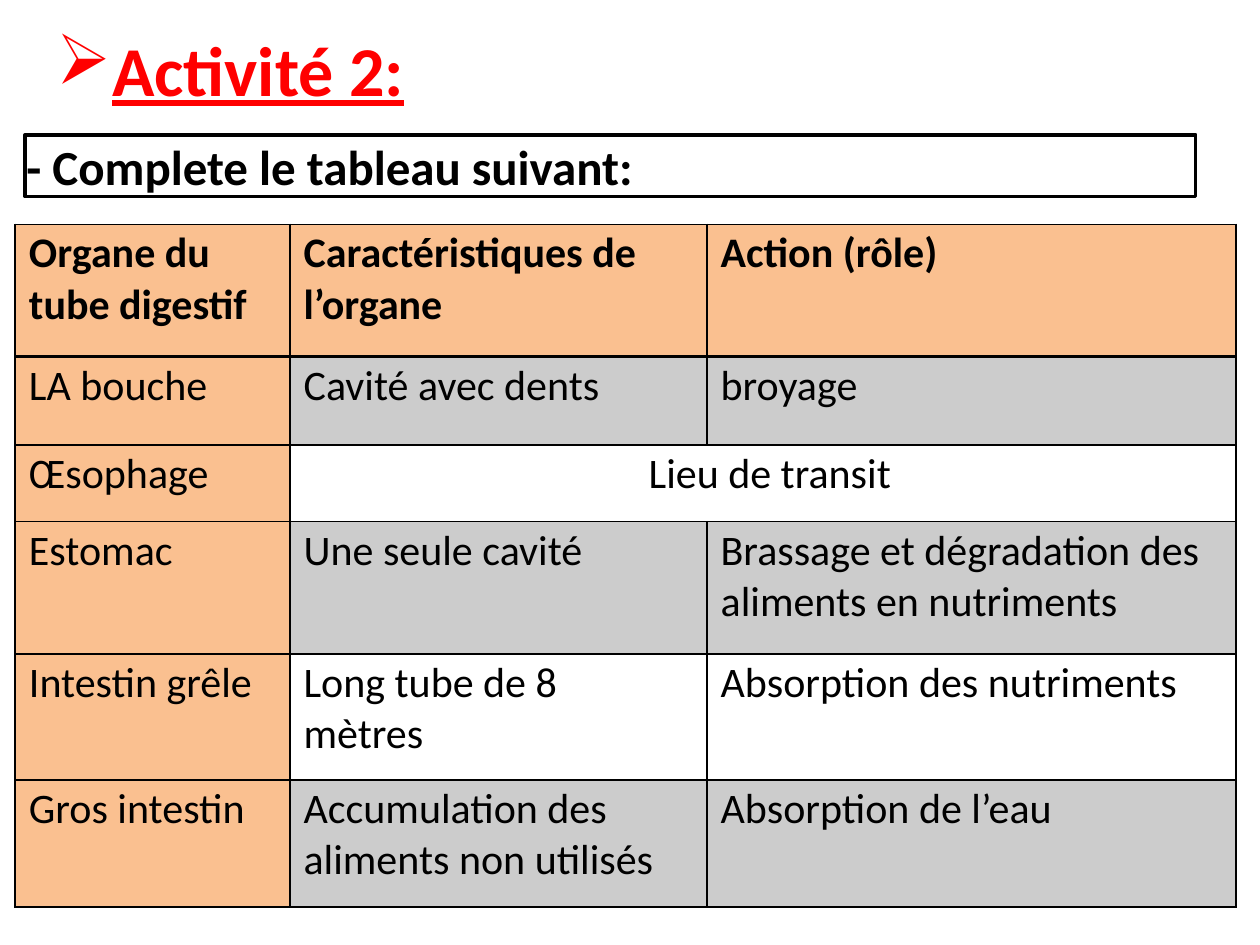
from lxml.etree import SubElement as Sub
from pptx import Presentation
from pptx.dml.color import RGBColor
from pptx.enum.shapes import MSO_SHAPE as Shape
from pptx.enum.text import MSO_ANCHOR as Anchor, PP_ALIGN as Align
from pptx.oxml.ns import qn
from pptx.util import Inches, Pt

BLACK, WHITE, RED, PEACH = "000000", "FFFFFF", "FF0000", "FAC090"
COLS = [2.18, 3.31, 4.2]
ROWS = [
    (1.05, ["Organe du tube digestif", "Caractéristiques de l’organe", "Action (rôle)"]),
    (0.7, ["LA bouche", "Cavité avec dents", "broyage"]),
    (0.61, ["Œsophage", "Lieu de transit"]),
    (1.05, ["Estomac", "Une seule cavité",
            "Brassage et dégradation des\naliments en nutriments"]),
    (1, ["Intestin grêle", "Long tube de 8 mètres", "Absorption des nutriments"]),
    (1.01, ["Gros intestin", "Accumulation des aliments non utilisés",
            "Absorption de l’eau"]),
]


def color(code):
    return RGBColor.from_string(code)


def paint(fill, code):
    fill.solid()
    fill.fore_color.rgb = color(code)


def style(para, size, code=BLACK, bold=False, left=0.0, hang=0.0, before=0.0):
    font = para.font
    font.name, font.size, font.bold = "Calibri", Pt(size), bold
    font.color.rgb = color(code)
    para.space_before = Pt(before)
    props = para._p.get_or_add_pPr()
    props.set("marL", str(Inches(left)))
    props.set("indent", str(Inches(hang)))
    return props


def inset(item, left=0.0, top=0.01, right=0.0):
    item.margin_left, item.margin_top = Inches(left), Inches(top)
    item.margin_right, item.margin_bottom = Inches(right), 0


def add_title(slide, text):
    box = slide.shapes.add_textbox(Inches(0.44), Inches(0.19), Inches(4.09), Inches(0.69))
    frame = box.text_frame
    frame.word_wrap, frame.vertical_anchor = True, Anchor.MIDDLE
    inset(frame)
    para = frame.paragraphs[0]
    para.text = text
    props = style(para, 40, RED, True, left=0.01, before=1)
    para.font.underline = True
    # Arrow bullet, placed before the default run settings
    bullet = Sub(props, qn("a:buChar"), char="➢")
    props.find(qn("a:defRPr")).addprevious(bullet)


def add_task(slide, text):
    box = slide.shapes.add_shape(
        Shape.RECTANGLE, Inches(0.2), Inches(1.07), Inches(9.29), Inches(0.49))
    box.shadow.inherit = False
    paint(box.fill, WHITE)
    box.line.color.rgb, box.line.width = color(BLACK), Pt(2)
    frame = box.text_frame
    frame.word_wrap, frame.vertical_anchor = True, Anchor.TOP
    inset(frame)
    para = frame.paragraphs[0]
    para.text, para.alignment = text, Align.LEFT
    style(para, 28, bold=True, left=0.51, hang=-0.5, before=0.9)


def add_border(cell, row):
    # The rule around the header's lower edge is heavier
    heavy = {"B": row == 0, "T": row == 1}
    props = cell._tc.get_or_add_tcPr()
    for side in "LRTB":
        width = Pt(2 if heavy.get(side) else 1)
        line = Sub(props, qn(f"a:ln{side}"), w=str(width))
        Sub(Sub(line, qn("a:solidFill")), qn("a:srgbClr"), val=BLACK)


def fill_cell(cell, row, col):
    if row == 0 or col == 0:
        paint(cell.fill, PEACH)
    elif row % 2:
        # Odd rows carry a see-through black
        paint(cell.fill, BLACK)
        tint = cell._tc.tcPr.find(qn("a:solidFill"))[0]
        Sub(tint, qn("a:alpha"), val="20000")
    else:
        cell.fill.background()


def write_cell(cell, text, row, center):
    inset(cell, top=0.03, right=0 if center else 0.25)
    cell.text_frame.text = text
    for num, para in enumerate(cell.text_frame.paragraphs):
        para.alignment = Align.CENTER if center else Align.LEFT
        style(para, 24, bold=row == 0, left=0.11, before=0 if num else 2)


def add_grid(slide):
    frame = slide.shapes.add_table(
        len(ROWS), len(COLS), Inches(0.12), Inches(1.78),
        Inches(sum(COLS)), Inches(sum(high for high, _ in ROWS)))
    table = frame.table
    for col, wide in enumerate(COLS):
        table.columns[col].width = Inches(wide)
    for row, (high, texts) in enumerate(ROWS):
        table.rows[row].height = Inches(high)
        merged = len(texts) < len(COLS)
        if merged:
            table.cell(row, 1).merge(table.cell(row, 2))
        for col in range(len(COLS)):
            cell = table.cell(row, col)
            add_border(cell, row)
            fill_cell(cell, row, col)
            if col < len(texts):
                write_cell(cell, texts[col], row, merged and col == 1)


def main():
    deck = Presentation()
    deck.slide_width, deck.slide_height = Inches(10), Inches(7.5)
    slide = deck.slides.add_slide(deck.slide_layouts[6])
    add_title(slide, "Activité 2:")
    add_task(slide, "- Complete le tableau suivant:")
    add_grid(slide)
    deck.save("out.pptx")


if __name__ == "__main__":
    main()
